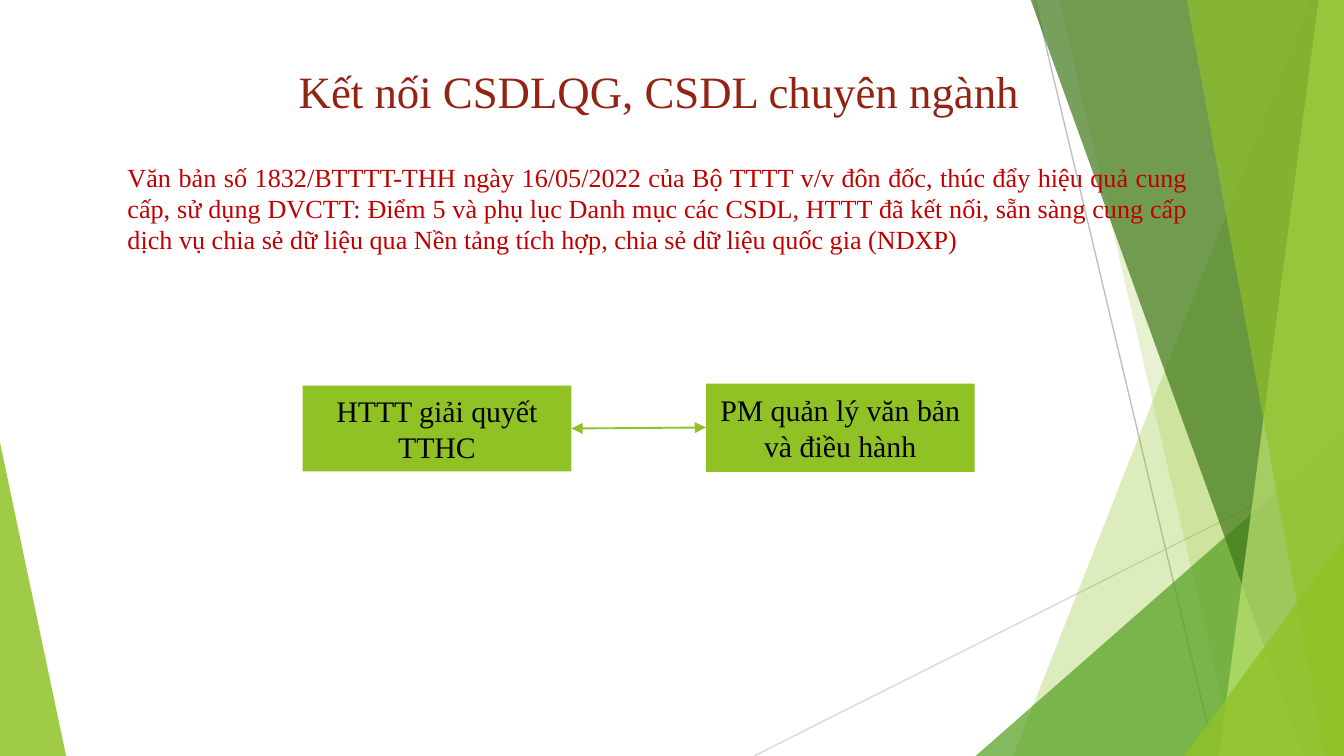
from lxml.etree import SubElement
from pptx import Presentation
from pptx.dml.color import RGBColor
from pptx.enum.shapes import MSO_CONNECTOR as CONN, MSO_SHAPE as SHAPE
from pptx.enum.text import MSO_ANCHOR as ANCHOR, PP_ALIGN as ALIGN
from pptx.oxml.ns import qn
from pptx.util import Cm, Pt

WIDTH, HEIGHT = 25.4, 14.29
FONT = "Times New Roman"
LIME, GREEN, DARK_GREEN, PALE_GREEN = "90C226", "54A021", "3F7819", "C0E474"

# Upper corner x and y, lower corner x, colour, opacity in percent;
# each facet runs from these corners to the right edge of the slide.
FACETS = [
    (24.77, 0, 19.15, LIME, 30),
    (20.02, 0, 23.34, LIME, 20),
    (WIDTH, 8.18, 18.44, GREEN, 72),
    (19.48, 0, 24.64, DARK_GREEN, 70),
    (24.92, 0, 23.04, PALE_GREEN, 70),
    (22.43, 0, 25.04, LIME, 65),
    (WIDTH, 10.19, 22.38, LIME, 80),
]


def rgb(color):
    return RGBColor.from_string(color)


def set_fill(s, color):
    s.shadow.inherit = False
    s.fill.solid()
    s.fill.fore_color.rgb = rgb(color)
    s.line.fill.background()


def add_polygon(slide, points, color, opacity):
    corners = [(Cm(x), Cm(y)) for x, y in points]
    builder = slide.shapes.build_freeform(*corners[0], scale=1.0)
    builder.add_line_segments(corners[1:], close=True)
    s = builder.convert_to_shape()
    set_fill(s, color)
    clr = s.fill._xPr.find(qn("a:solidFill"))[0]
    SubElement(clr, qn("a:alpha")).set("val", str(opacity * 1000))


def add_line(slide, start, end, color, width, arrows=False):
    s = slide.shapes.add_connector(CONN.STRAIGHT, *map(Cm, start + end))
    s.line.color.rgb = rgb(color)
    s.line.width = Pt(width)
    if arrows:
        ln = s.line._get_or_add_ln()
        for end_tag in ("a:headEnd", "a:tailEnd"):
            SubElement(ln, qn(end_tag)).set("type", "triangle")
    SubElement(s._element.spPr, qn("a:effectLst"))


def write(s, text, size, color, align):
    tf = s.text_frame
    tf.word_wrap = True
    p = tf.paragraphs[0]
    p.alignment = align
    r = p.add_run()
    r.text = text
    r.font.name = FONT
    r.font.size = Pt(size)
    r.font.color.rgb = rgb(color)
    return tf


def add_text(slide, box, text, size, color, align):
    return write(slide.shapes.add_textbox(*map(Cm, box)), text, size, color, align)


def add_system(slide, box, text):
    s = slide.shapes.add_shape(SHAPE.RECTANGLE, *map(Cm, box))
    set_fill(s, LIME)
    write(s, text, 16, "000000", ALIGN.CENTER).vertical_anchor = ANCHOR.MIDDLE


def add_backdrop(slide):
    add_polygon(slide, [(0, 8.36), (1.25, HEIGHT), (0, HEIGHT)], LIME, 85)
    add_line(slide, (14.25, HEIGHT), (WIDTH, 8.69), "D9D9D9", 0.75)
    add_line(slide, (19.56, 0), (22.96, HEIGHT), "BFBFBF", 0.75)
    for x, y, foot, color, opacity in FACETS:
        points = [(x, y), (foot, HEIGHT), (WIDTH, HEIGHT)]
        if x < WIDTH:
            points.append((WIDTH, y))
        add_polygon(slide, points, color, opacity)


def main():
    prs = Presentation()
    prs.slide_width, prs.slide_height = Cm(WIDTH), Cm(HEIGHT)
    slide = prs.slides.add_slide(prs.slide_layouts[6])
    add_backdrop(slide)

    title = add_text(slide, (3.18, 0.97, 18.54, 1.57),
                     "Kết nối CSDLQG, CSDL chuyên ngành", 24, "932313", ALIGN.CENTER)
    title.margin_top = Cm(0.23)
    add_text(slide, (2.16, 2.92, 20.55, 2.06),
             "Văn bản số 1832/BTTTT-THH ngày 16/05/2022 của Bộ TTTT v/v đôn đốc, "
             "thúc đẩy hiệu quả cung cấp, sử dụng DVCTT: Điểm 5 và phụ lục Danh mục "
             "các CSDL, HTTT đã kết nối, sẵn sàng cung cấp dịch vụ chia sẻ dữ liệu qua "
             "Nền tảng tích hợp, chia sẻ dữ liệu quốc gia (NDXP)",
             14, "C00000", ALIGN.JUSTIFY)

    add_system(slide, (13.34, 7.25, 5.08, 1.67), "PM quản lý văn bản và điều hành")
    add_system(slide, (5.72, 7.29, 5.08, 1.62), "HTTT giải quyết TTHC")
    add_line(slide, (10.8, 8.1), (13.34, 8.08), LIME, 1, arrows=True)
    prs.save("out.pptx")


if __name__ == "__main__":
    main()
